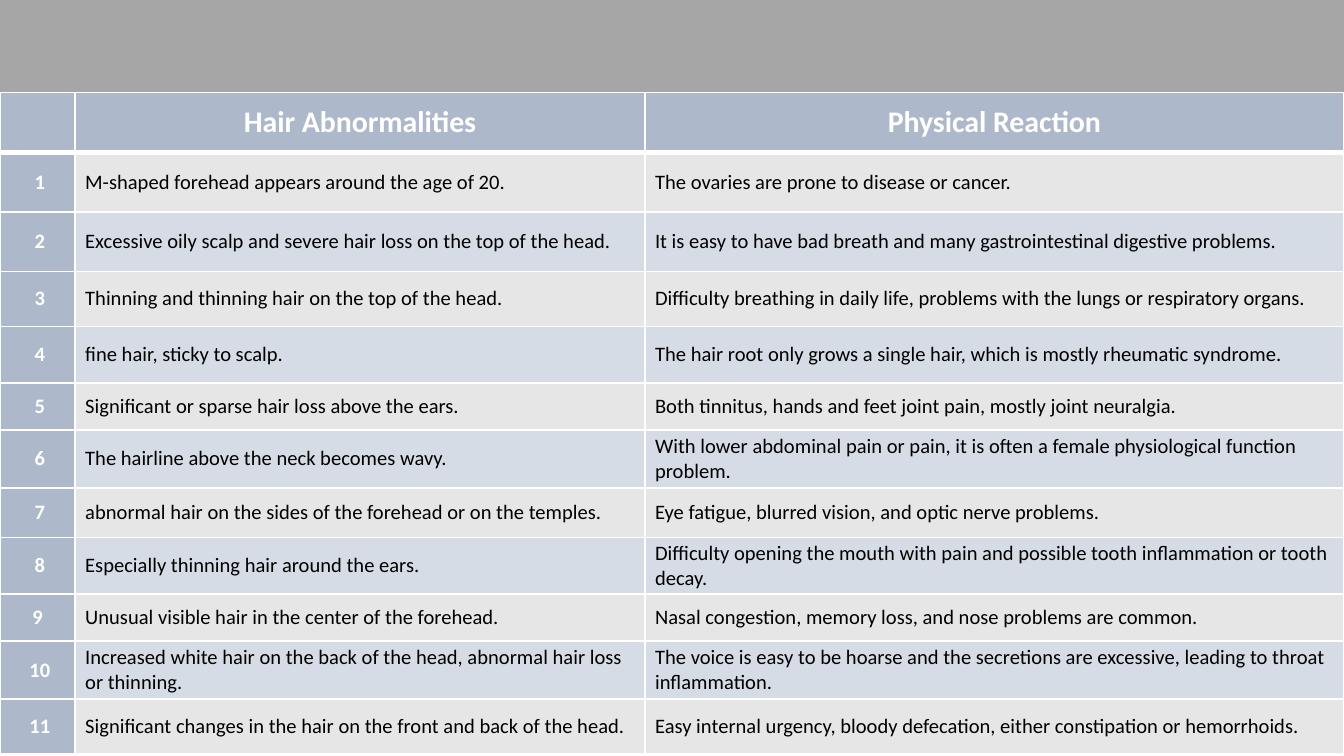
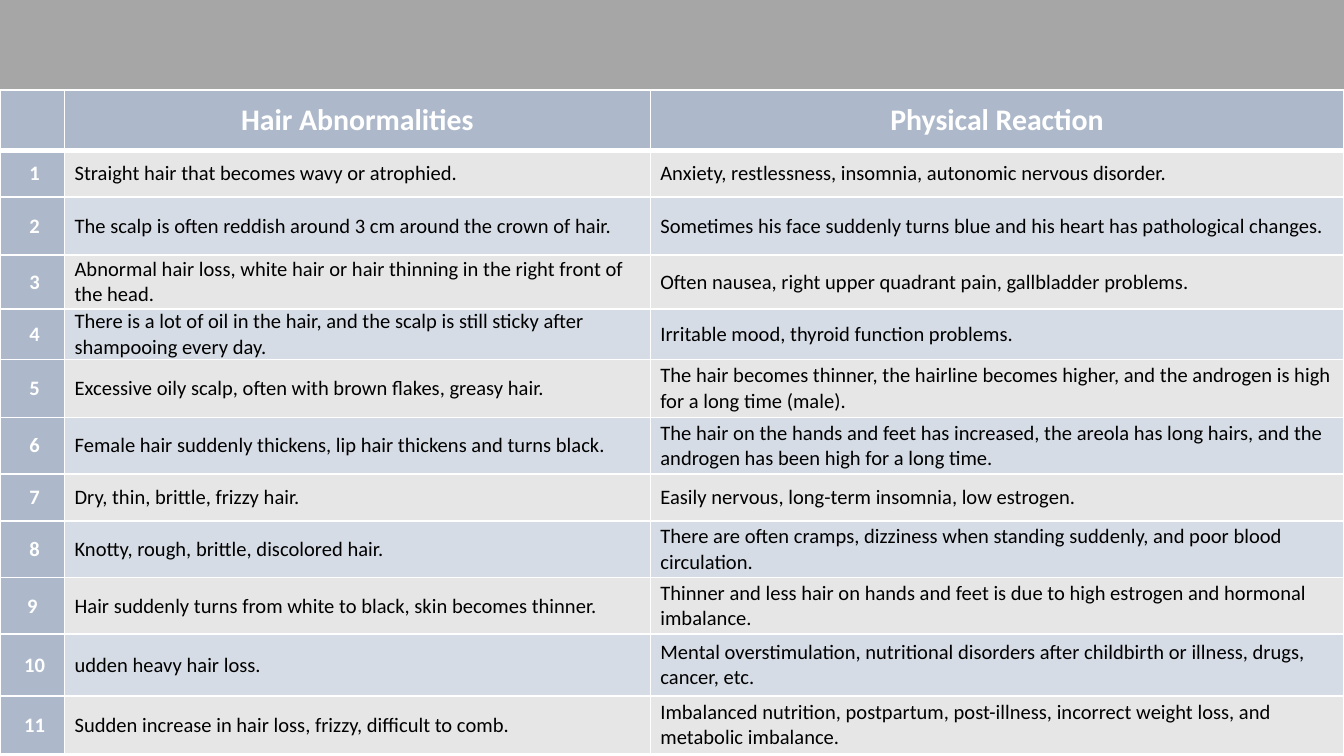
from dataclasses import dataclass

import pptx
import pptx.dml.color
import pptx.enum.shapes
import pptx.enum.text
import pptx.oxml
import pptx.oxml.ns
import pptx.util
from pptx.util import Cm

# Shared look
SLIDE_WIDTH, SLIDE_HEIGHT = Cm(25.4), Cm(14.29)
FONT = "Calibri"
BAND, HEADER = "A6A6A6", "ADB9CA"
ODD_ROW, EVEN_ROW = "E7E6E6", "D6DCE5"
WHITE, BLACK = "FFFFFF", "000000"
THIN, THICK = 1, 3
HEADINGS = ("", "Hair Abnormalities", "Physical Reaction")
CENTER = pptx.enum.text.PP_ALIGN.CENTER
LEFT = pptx.enum.text.PP_ALIGN.LEFT


@dataclass(frozen=True)
class CellStyle:
    fill: str
    color: str
    size: int
    bold: bool
    align: pptx.enum.text.PP_ALIGN


@dataclass(frozen=True)
class SymptomTable:
    top: float
    columns: tuple[float, ...]
    rows: tuple[float, ...]
    symptoms: tuple[tuple[str, str], ...]


HEADING_STYLE = CellStyle(HEADER, WHITE, 16, True, CENTER)
NUMBER_STYLE = CellStyle(HEADER, WHITE, 11, True, CENTER)
ODD_STYLE = CellStyle(ODD_ROW, BLACK, 11, False, LEFT)
EVEN_STYLE = CellStyle(EVEN_ROW, BLACK, 11, False, LEFT)

# Content of the two slides, lengths in centimetres
SYMPTOM_TABLES = (
    SymptomTable(
        top=1.75,
        columns=(1.42, 10.77, 13.21),
        rows=(1.14, 1.12, 1.12, 1.04, 1.07, 0.89, 1.09, 0.94, 1.07, 0.89, 1.09, 1.04),
        symptoms=(
            ("M-shaped forehead appears around the age of 20.",
             "The ovaries are prone to disease or cancer."),
            ("Excessive oily scalp and severe hair loss on the top of the head.",
             "It is easy to have bad breath and many gastrointestinal digestive problems."),
            ("Thinning and thinning hair on the top of the head.",
             "Difficulty breathing in daily life, problems with the lungs or respiratory organs."),
            ("fine hair, sticky to scalp.",
             "The hair root only grows a single hair, which is mostly rheumatic syndrome."),
            ("Significant or sparse hair loss above the ears.",
             "Both tinnitus, hands and feet joint pain, mostly joint neuralgia."),
            ("The hairline above the neck becomes wavy.",
             "With lower abdominal pain or pain, it is often a female physiological "
             "function problem."),
            ("abnormal hair on the sides of the forehead or on the temples.",
             "Eye fatigue, blurred vision, and optic nerve problems."),
            ("Especially thinning hair around the ears.",
             "Difficulty opening the mouth with pain and possible tooth inflammation "
             "or tooth decay."),
            ("Unusual visible hair in the center of the forehead.",
             "Nasal congestion, memory loss, and nose problems are common."),
            ("Increased white hair on the back of the head, abnormal hair loss or thinning.",
             "The voice is easy to be hoarse and the secretions are excessive, "
             "leading to throat inflammation."),
            ("Significant changes in the hair on the front and back of the head.",
             "Easy internal urgency, bloody defecation, either constipation or hemorrhoids."),
        ),
    ),
    SymptomTable(
        top=1.7,
        columns=(1.22, 11.07, 13.11),
        rows=(1.14, 0.89, 1.09, 1.02, 0.94, 1.09, 1.07, 0.89, 1.07, 1.07, 1.17, 1.09),
        symptoms=(
            ("Straight hair that becomes wavy or atrophied.",
             "Anxiety, restlessness, insomnia, autonomic nervous disorder."),
            ("The scalp is often reddish around 3 cm around the crown of hair.",
             "Sometimes his face suddenly turns blue and his heart has pathological changes."),
            ("Abnormal hair loss, white hair or hair thinning in the right front of the head.",
             "Often nausea, right upper quadrant pain, gallbladder problems."),
            ("There is a lot of oil in the hair, and the scalp is still sticky after "
             "shampooing every day.",
             "Irritable mood, thyroid function problems."),
            ("Excessive oily scalp, often with brown flakes, greasy hair.",
             "The hair becomes thinner, the hairline becomes higher, and the androgen "
             "is high for a long time (male)."),
            ("Female hair suddenly thickens, lip hair thickens and turns black.",
             "The hair on the hands and feet has increased, the areola has long hairs, "
             "and the androgen has been high for a long time."),
            ("Dry, thin, brittle, frizzy hair.",
             "Easily nervous, long-term insomnia, low estrogen."),
            ("Knotty, rough, brittle, discolored hair.",
             "There are often cramps, dizziness when standing suddenly, and poor blood "
             "circulation."),
            ("Hair suddenly turns from white to black, skin becomes thinner.",
             "Thinner and less hair on hands and feet is due to high estrogen and "
             "hormonal imbalance."),
            ("udden heavy hair loss.",
             "Mental overstimulation, nutritional disorders after childbirth or illness, "
             "drugs, cancer, etc."),
            ("Sudden increase in hair loss, frizzy, difficult to comb.",
             "Imbalanced nutrition, postpartum, post-illness, incorrect weight loss, "
             "and metabolic imbalance."),
        ),
    ),
)


def rgb(color: str) -> pptx.dml.color.RGBColor:
    return pptx.dml.color.RGBColor.from_string(color)


def set_format(target, values: dict) -> None:
    for attribute, value in values.items():
        setattr(target, attribute, value)


def add_band(slide) -> None:
    band = slide.shapes.add_shape(
        pptx.enum.shapes.MSO_SHAPE.RECTANGLE, 0, 0, SLIDE_WIDTH, Cm(1.75))
    band.shadow.inherit = False
    band.fill.solid()
    band.fill.fore_color.rgb = rgb(BAND)
    band.line.fill.background()


def add_borders(cell, top: int, bottom: int) -> None:
    properties = cell._tc.get_or_add_tcPr()
    namespace = pptx.oxml.ns.nsdecls("a")
    for side, points in (("L", THIN), ("R", THIN), ("T", top), ("B", bottom)):
        properties.append(pptx.oxml.parse_xml(
            f'<a:ln{side} {namespace} w="{pptx.util.Pt(points)}"><a:solidFill>'
            f'<a:srgbClr val="{WHITE}"/></a:solidFill></a:ln{side}>'))


def fill_cell(cell, text: str, style: CellStyle) -> None:
    set_format(cell, {
        "margin_left": Cm(0.19), "margin_right": Cm(0.19),
        "margin_top": 0, "margin_bottom": 0,
        "vertical_anchor": pptx.enum.text.MSO_ANCHOR.MIDDLE,
    })
    cell.fill.solid()
    cell.fill.fore_color.rgb = rgb(style.fill)
    paragraph = cell.text_frame.paragraphs[0]
    paragraph.alignment = style.align
    if text:
        run = paragraph.add_run()
        run.text = text
        set_format(run.font, {
            "name": FONT, "size": pptx.util.Pt(style.size), "bold": style.bold})
        run.font.color.rgb = rgb(style.color)


def row_label(number: int) -> str:
    # Every number but 9 follows a no-break space
    return "9" if number == 9 else f" {number}"


def add_symptoms(slide, content: SymptomTable) -> None:
    table = slide.shapes.add_table(
        len(content.rows), len(content.columns), 0, Cm(content.top),
        SLIDE_WIDTH, Cm(sum(content.rows))).table
    set_format(table, {"first_row": False, "horz_banding": False})
    for column, width in zip(table.columns, content.columns):
        column.width = Cm(width)
    for row, height in zip(table.rows, content.rows):
        row.height = Cm(height)

    lines = [HEADINGS] + [
        (row_label(number), *pair) for number, pair in enumerate(content.symptoms, 1)]
    for r, line in enumerate(lines):
        body_style = ODD_STYLE if r % 2 else EVEN_STYLE
        styles = (NUMBER_STYLE, body_style, body_style) if r else (HEADING_STYLE,) * 3
        for c, (text, style) in enumerate(zip(line, styles)):
            cell = table.cell(r, c)
            add_borders(cell, THICK if r == 1 else THIN, THICK if r == 0 else THIN)
            fill_cell(cell, text, style)


def main() -> None:
    deck = pptx.Presentation()
    set_format(deck, {"slide_width": SLIDE_WIDTH, "slide_height": SLIDE_HEIGHT})
    # The slides have no title, so they use the blank layout
    for content in SYMPTOM_TABLES:
        slide = deck.slides.add_slide(deck.slide_layouts[6])
        add_band(slide)
        add_symptoms(slide, content)
    deck.save("out.pptx")


if __name__ == "__main__":
    main()
